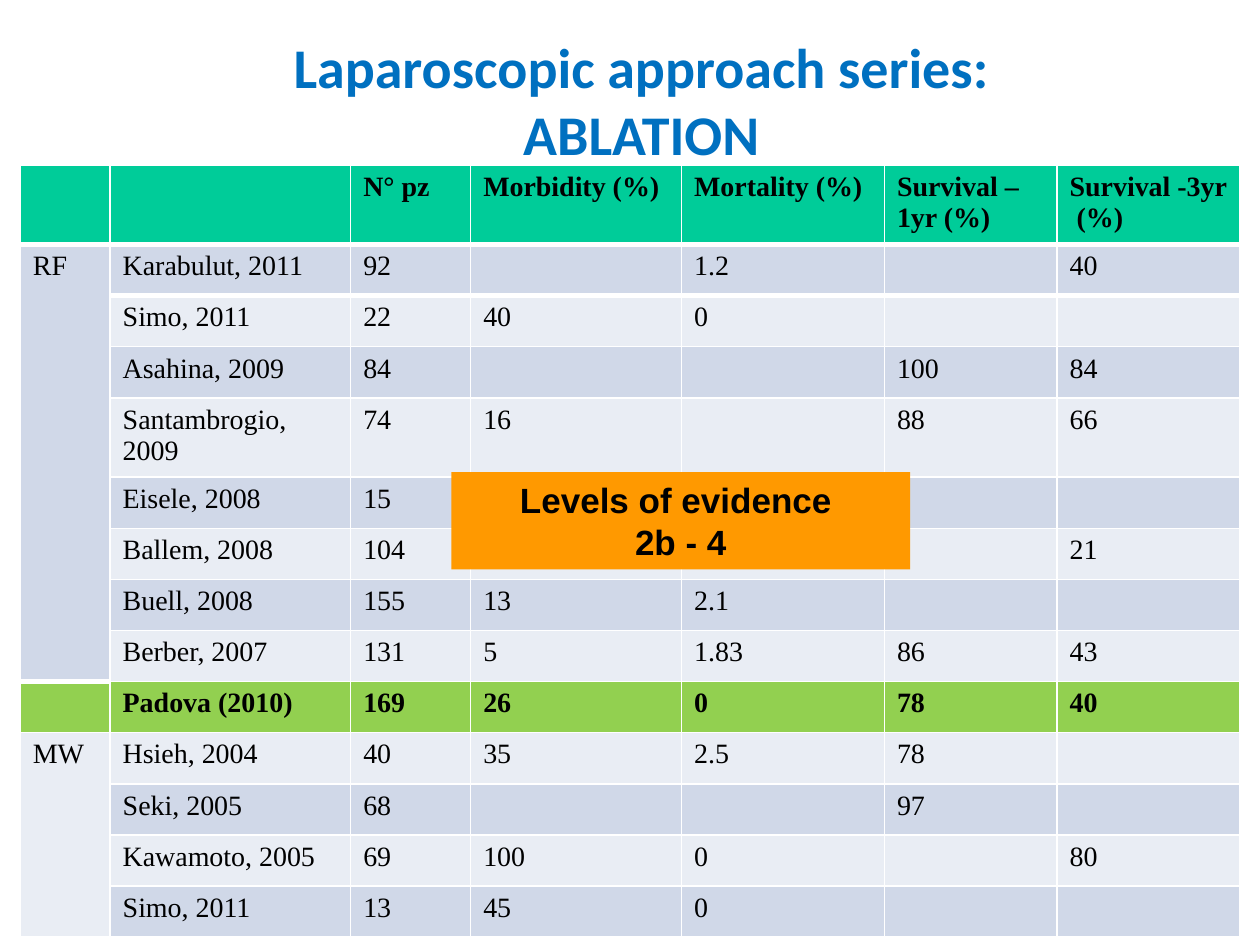
from lxml import etree
from pptx import Presentation
from pptx.dml.color import RGBColor
from pptx.enum.shapes import MSO_SHAPE
from pptx.enum.text import MSO_ANCHOR, MSO_AUTO_SIZE, PP_ALIGN
from pptx.oxml.ns import qn
from pptx.util import Cm, Pt

RECTANGLE = MSO_SHAPE.RECTANGLE
MIDDLE = MSO_ANCHOR.MIDDLE
GROW = MSO_AUTO_SIZE.SHAPE_TO_FIT_TEXT
NO_AUTOFIT = MSO_AUTO_SIZE.NONE
CENTER = PP_ALIGN.CENTER

HEADER_FILL = "00CC99"
BAND_FILLS = ("E9EDF4", "D0D8E8")
HIGHLIGHT_FILL = "92D050"
HIGHLIGHT_ROW = 9
TALL_ROWS = (0, 4)
TALL_HEIGHT, ROW_HEIGHT = 1.6, 1.03
COLUMN_WIDTHS = (1.81, 4.85, 2.42, 4.25, 4.09, 3.48, 3.68)
METHOD_SPANS = ((1, 8), (10, 13))

SERIES = [
    ("", "", "N° pz", "Morbidity (%)", "Mortality (%)", "Survival – 1yr (%)", "Survival -3yr\v (%)"),
    ("RF", "Karabulut, 2011", "92", "", "1.2", "", "40"),
    ("", "Simo, 2011", "22", "40", "0", "", ""),
    ("", "Asahina, 2009", "84", "", "", "100", "84"),
    ("", "Santambrogio, 2009", "74", "16", "", "88", "66"),
    ("", "Eisele, 2008", "15", "", "0", "", ""),
    ("", "Ballem, 2008", "104", "", "", "", "21"),
    ("", "Buell, 2008", "155", "13", "2.1", "", ""),
    ("", "Berber, 2007", "131", "5", "1.83", "86", "43"),
    ("", "Padova (2010)", "169", "26", "0", "78", "40"),
    ("MW", "Hsieh, 2004", "40", "35", "2.5", "78", ""),
    ("", "Seki, 2005", "68", "", "", "97", ""),
    ("", "Kawamoto, 2005", "69", "100", "0", "", "80"),
    ("", "Simo, 2011", "13", "45", "0", "", ""),
]


def color(value):
    return RGBColor.from_string(value)


def fill_solid(target, value):
    target.fill.solid()
    target.fill.fore_color.rgb = color(value)


def write_text(text_frame, text, *, font, size, text_color="000000", bold=False, align=None):
    text_frame.text = text
    for paragraph in text_frame.paragraphs:
        paragraph.alignment = align
        for run in paragraph.runs:
            run.font.name = font
            run.font.size = Pt(size)
            run.font.bold = bold
            run.font.color.rgb = color(text_color)


def set_border(cell, side, width, line_color="FFFFFF"):
    properties = cell._tc.get_or_add_tcPr()
    line = etree.Element(qn(f"a:{side}"), w=str(Pt(width)))
    fill = etree.SubElement(line, qn("a:solidFill"))
    etree.SubElement(fill, qn("a:srgbClr"), val=line_color)
    properties.insert(0, line)


def place_title(slide, left, top, width, height):
    title = slide.shapes.title
    title.left, title.top = Cm(left), Cm(top)
    title.width, title.height = Cm(width), Cm(height)
    text_frame = title.text_frame
    text_frame.word_wrap = True
    text_frame.auto_size = NO_AUTOFIT
    text_frame.vertical_anchor = MIDDLE
    write_text(text_frame, "Laparoscopic approach series:\nABLATION",
               font="Calibri", size=32, text_color="0070C0", bold=True, align=CENTER)


def row_fill(row_index):
    if row_index == 0:
        return HEADER_FILL
    if row_index == HIGHLIGHT_ROW:
        return HIGHLIGHT_FILL
    return BAND_FILLS[row_index % 2]


def place_series_table(slide, left, top):
    heights = [TALL_HEIGHT if index in TALL_ROWS else ROW_HEIGHT for index in range(len(SERIES))]
    table = slide.shapes.add_table(len(SERIES), len(COLUMN_WIDTHS), Cm(left), Cm(top),
                                   Cm(sum(COLUMN_WIDTHS)), Cm(sum(heights))).table
    for column, width in zip(table.columns, COLUMN_WIDTHS):
        column.width = Cm(width)
    for row_index, values in enumerate(SERIES):
        table.rows[row_index].height = Cm(heights[row_index])
        for column_index, value in enumerate(values):
            cell = table.cell(row_index, column_index)
            fill_solid(cell, row_fill(row_index))
            if value:
                write_text(cell.text_frame, value, font="Times New Roman", size=16,
                           bold=row_index in (0, HIGHLIGHT_ROW))
            if row_index == 0:
                cell.margin_right = Cm(0.15)
                set_border(cell, "lnB", 3)
            elif row_index == 1:
                set_border(cell, "lnT", 3)
    for first, last in METHOD_SPANS:
        table.cell(first, 0).merge(table.cell(last, 0))


def place_evidence_banner(slide, left, top, width, height):
    banner = slide.shapes.add_shape(RECTANGLE, Cm(left), Cm(top), Cm(width), Cm(height))
    banner.shadow.inherit = False
    fill_solid(banner, "FF9900")
    banner.line.fill.background()
    text_frame = banner.text_frame
    text_frame.word_wrap = True
    text_frame.auto_size = GROW
    write_text(text_frame, "Levels of evidence \n2b - 4",
               font="Arial", size=20, bold=True, align=CENTER)


def main():
    presentation = Presentation()
    presentation.slide_width, presentation.slide_height = Cm(25.4), Cm(19.05)
    slide = presentation.slides.add_slide(presentation.slide_layouts[5])
    place_title(slide, 1.5, 0.42, 22.86, 3.18)
    place_series_table(slide, 0.41, 3.33)
    place_evidence_banner(slide, 9.1, 9.52, 9.25, 1.96)
    presentation.save("out.pptx")


if __name__ == "__main__":
    main()
